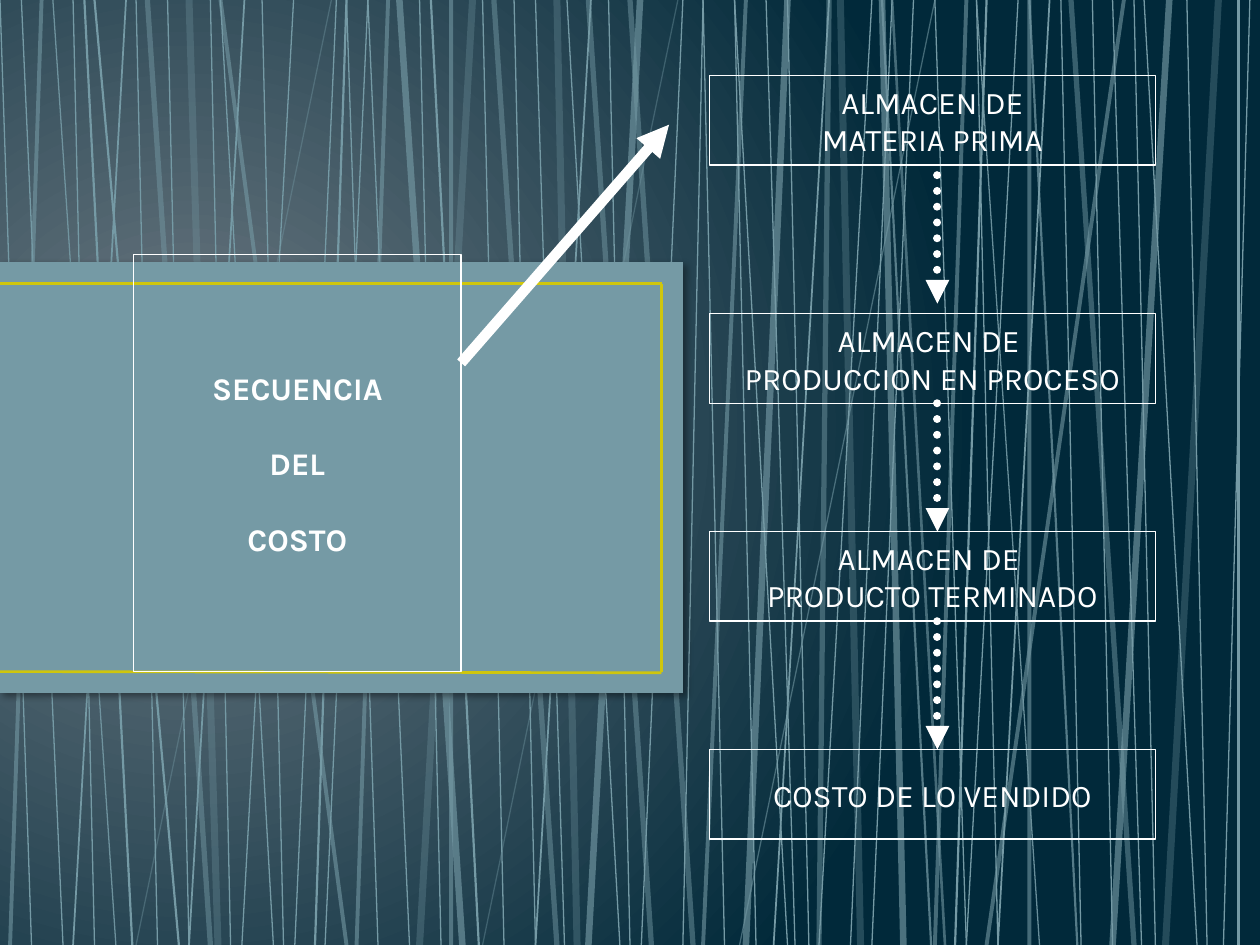
"""Draw the cost sequence slide: a title panel and four linked stores."""
import dataclasses
import typing

import lxml.etree
import pptx
import pptx.dml.color
import pptx.enum.dml
import pptx.enum.shapes
import pptx.enum.text
import pptx.oxml.ns
import pptx.util

Inches = pptx.util.Inches
Pt = pptx.util.Pt
qn = pptx.oxml.ns.qn

WHITE, STEEL, GOLD, BLACK = "FFFFFF", "759AA5", "CFC60D", "000000"
SLATE, NAVY = "717C84", "01293A"
WIDE, HIGH = 10, 7.5


@dataclasses.dataclass
class Strand:
    width: float
    alpha: int
    ends: list[tuple[float, float]]


@dataclasses.dataclass
class Box:
    left: float
    top: float
    width: float
    height: float
    lines: list[str]
    bold: bool = False
    gap: float = 0


@dataclasses.dataclass
class Arrow:
    start: tuple[float, float]
    end: tuple[float, float]
    width: float = 4.5
    dots: bool = True


STRANDS = [
    Strand(0.75, 100, [
        (2.08, 2.25), (1.75, 2.17), (2.33, 1.92), (0, 0.25), (0.17, 0.5),
        (1.67, 1.83), (0.58, 0.75), (2.67, 2.34), (2.92, 2.58), (1.08, 1.25),
        (1.33, 1.5), (4.83, 5), (4.5, 4.92), (2.75, 3), (2.92, 3.25),
        (3.33, 3.5), (5.42, 5.09), (5.58, 5.42), (4.25, 4.48), (3.83, 4),
        (4.08, 4.25), (5.83, 6.25), (6.92, 6.5), (6.25, 6.42), (7.25, 6.92),
        (7.08, 6.75), (6.08, 6.31), (5.58, 5.75), (5.83, 6), (7.42, 7.67),
        (7.75, 7.92), (8.42, 8.58), (8.67, 8.83), (9.42, 9.58), (9.08, 9.5),
        (9, 9.17), (9.92, 9.71), (8.83, 9.06), (8.08, 7.67)]),
    Strand(0.75, 90, [(0.42, 0.92), (7.75, 8.25)]),
    Strand(0.75, 56, [(7.42, 5.87)]),
    Strand(0.75, 39, [(2.63, 1.08), (5.38, 3.83)]),
    Strand(1, 100, [(1, 0.58), (1.94, 1.5), (4.69, 4.25), (6.58, 6.14),
                    (8.33, 7.92)]),
    Strand(1.25, 100, [(0.75, 1.42), (0.67, 1.05), (2.75, 2.5), (3.42, 3.8),
                       (7.83, 7.58), (9.83, 9.83)]),
    Strand(1.25, 72, [(8.17, 8.55), (7, 7.39)]),
    Strand(1.5, 58, [(7.08, 7.5)]),
    Strand(2.25, 58, [(0.33, 0.08), (1.75, 2.75), (3.08, 2.83), (3.58, 3.58),
                      (5.92, 5.58), (7.67, 7.42), (8.17, 8.17),
                      (8.92, 7.83)]),
    Strand(3, 47, [(1.17, 1.67), (3.92, 4.42), (4.67, 5.17), (8.5, 9),
                   (6.58, 6.5), (5, 5.5)]),
    Strand(3.75, 63, [(5.08, 4.67), (3.17, 3.67), (9.28, 8.83), (7, 7.17),
                      (6.25, 5.92)]),
    Strand(4, 30, [(1.5, 1.73), (3.75, 3.33), (4.42, 4.58), (6.67, 6.83),
                   (9.67, 9.25)]),
]
FRAME = [((0, 2.25), (5.25, 2.25)), ((0, 5.33), (5.25, 5.34)),
         ((5.25, 2.25), (5.25, 5.33))]
STORES = [
    (0.6, ["ALMACEN DE", "MATERIA PRIMA"]),
    (2.49, ["ALMACEN DE ", "PRODUCCION EN PROCESO"]),
    (4.22, ["ALMACEN DE ", "PRODUCTO TERMINADO"]),
    (5.95, ["COSTO DE LO VENDIDO"]),
]
TITLE = Box(1.06, 2.02, 2.6, 3.31, ["SECUENCIA", "DEL", "COSTO"], True, 21.5)
BOXES = [TITLE] + [Box(5.63, top, 3.54, 0.71, lines) for top, lines in STORES]
ARROWS = [Arrow((3.66, 2.88), (5.31, 0.99), 6, False)] + [
    Arrow((7.44, top), (7.44, top + 1.02)) for top in (1.39, 3.2, 4.93)]


def tint(code: str) -> pptx.dml.color.RGBColor:
    """Turn a hex string into a colour."""
    return pptx.dml.color.RGBColor.from_string(code)


def child(node: typing.Any, tag: str, **attrs: typing.Any) -> typing.Any:
    """Append an element with the given attributes."""
    return lxml.etree.SubElement(
        node, qn(tag), {key: str(val) for key, val in attrs.items()})


def draw_line(shapes: typing.Any, start: tuple[float, float],
              end: tuple[float, float], code: str, width: float,
              alpha: int = 100) -> typing.Any:
    """Draw a straight line and return its connector."""
    line = shapes.add_connector(
        pptx.enum.shapes.MSO_CONNECTOR.STRAIGHT,
        *(Inches(val) for val in (*start, *end)))
    line.line.color.rgb = tint(code)
    line.line.width = Pt(width)
    if alpha < 100:
        mark = line._element.spPr.find(".//" + qn("a:srgbClr"))
        child(mark, "a:alpha", val=alpha * 1000)
    child(line._element.spPr, "a:effectLst")
    return line


def draw_arrow(shapes: typing.Any, arrow: Arrow) -> None:
    """Draw a white line with a triangle at its end."""
    line = draw_line(shapes, arrow.start, arrow.end, WHITE, arrow.width)
    edge = line._element.spPr.find(qn("a:ln"))
    if arrow.dots:
        line.line.dash_style = pptx.enum.dml.MSO_LINE.ROUND_DOT
        edge.set("cap", "rnd")
    child(edge, "a:tailEnd", type="triangle")


def add_rect(shapes: typing.Any, left: float, top: float, width: float,
             height: float) -> typing.Any:
    """Add a rectangle with no inherited shadow."""
    rect = shapes.add_shape(
        pptx.enum.shapes.MSO_SHAPE.RECTANGLE,
        *(Inches(val) for val in (left, top, width, height)))
    rect.shadow.inherit = False
    return rect


def draw_panel(shapes: typing.Any) -> None:
    """Draw the steel panel with its soft shadow."""
    panel = add_rect(shapes, 0, 2.08, 5.42, 3.42)
    panel.fill.solid()
    panel.fill.fore_color.rgb = tint(STEEL)
    panel.line.fill.background()
    glow = child(panel._element.spPr.find(qn("a:effectLst")), "a:outerShdw",
                 blurRad=Pt(4), dist=Pt(3), dir=45 * 60000, algn="tl",
                 rotWithShape=0)
    child(child(glow, "a:srgbClr", val=BLACK), "a:alpha", val=40000)


def draw_box(shapes: typing.Any, box: Box) -> None:
    """Draw an outlined box with centred lines of text."""
    rect = add_rect(shapes, box.left, box.top, box.width, box.height)
    rect.fill.background()
    rect.line.color.rgb = tint(WHITE)
    rect.line.width = Pt(0.75)
    frame = rect.text_frame
    frame.word_wrap = False
    frame.vertical_anchor = pptx.enum.text.MSO_ANCHOR.MIDDLE
    for rank, text in enumerate(box.lines):
        para = frame.add_paragraph() if rank else frame.paragraphs[0]
        para.alignment = pptx.enum.text.PP_ALIGN.CENTER
        para.space_before = Pt(box.gap if rank else 0)
        run = para.add_run()
        run.text = text
        run.font.name = "Karla"
        run.font.size = Pt(18)
        run.font.bold = box.bold
        run.font.color.rgb = tint(WHITE)


def paint_back(slide: typing.Any) -> None:
    """Fill the background with a radial gradient."""
    fill = slide.background.fill
    fill.gradient()
    for stop, code in zip(fill.gradient_stops, (SLATE, NAVY)):
        stop.color.rgb = tint(code)
    grad = slide._element.find(".//" + qn("a:gradFill"))
    grad.remove(grad.find(qn("a:lin")))
    child(child(grad, "a:path", path="circle"), "a:fillToRect",
          l=15000, t=50000, r=85000, b=60000)


def main() -> None:
    """Build and save the slide."""
    deck = pptx.Presentation()
    deck.slide_width, deck.slide_height = Inches(WIDE), Inches(HIGH)
    slide = deck.slides.add_slide(deck.slide_layouts[6])
    paint_back(slide)
    weave = slide.shapes.add_group_shape().shapes
    for strand in STRANDS:
        for top, base in strand.ends:
            draw_line(weave, (top, 0), (base, HIGH), STEEL, strand.width,
                      strand.alpha)
    draw_panel(slide.shapes)
    trim = slide.shapes.add_group_shape().shapes
    for start, end in FRAME:
        draw_line(trim, start, end, GOLD, 1.5)
    for box in BOXES:
        draw_box(slide.shapes, box)
    for arrow in ARROWS:
        draw_arrow(slide.shapes, arrow)
    deck.save("out.pptx")


if __name__ == "__main__":
    main()
